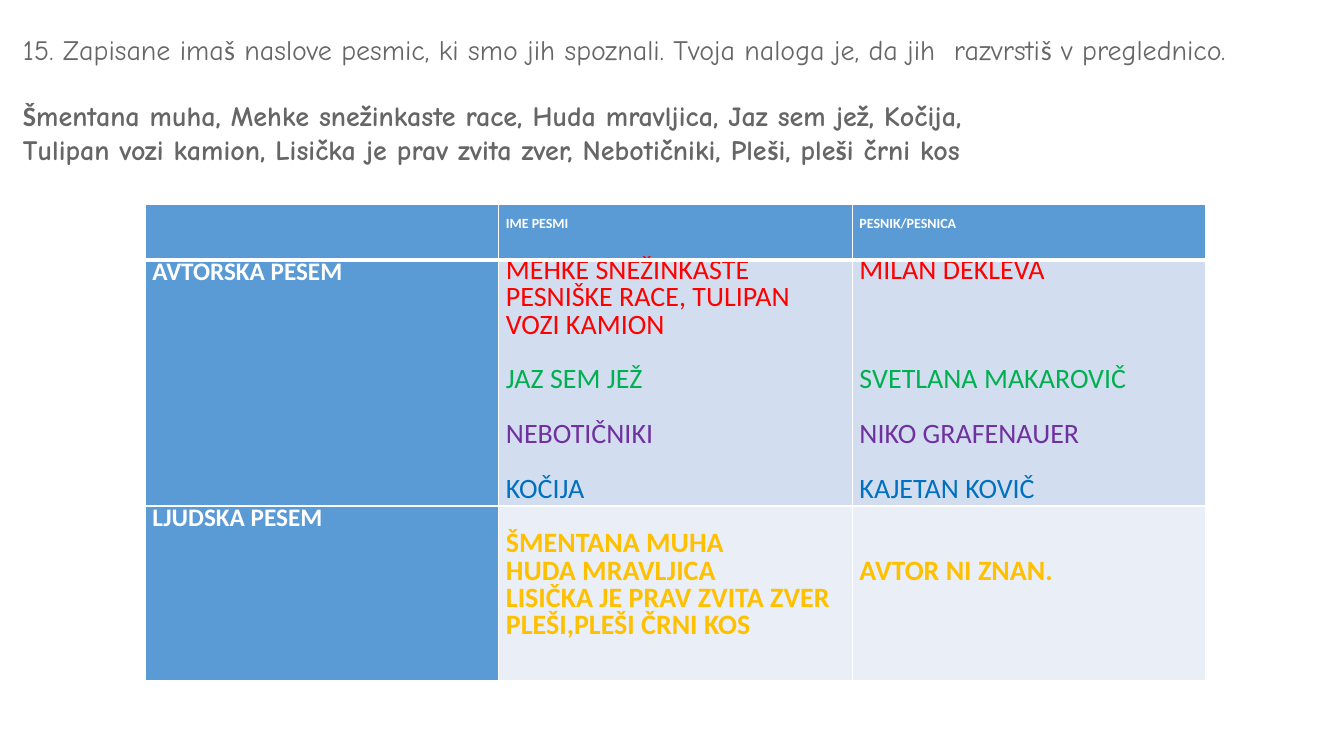
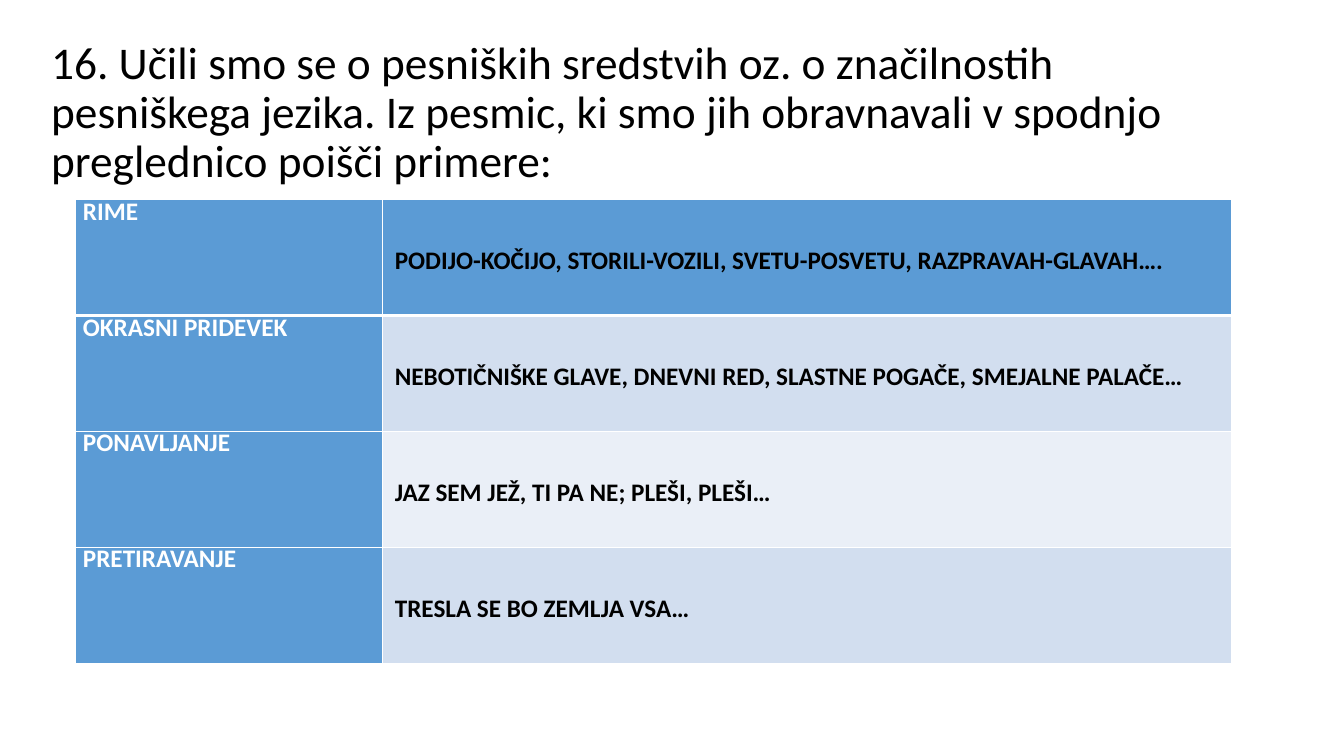
from itertools import groupby

from lxml.etree import SubElement
from pptx import Presentation
from pptx.dml.color import RGBColor
from pptx.oxml.ns import qn
from pptx.util import Cm, Pt

WHITE = RGBColor(0xFF, 0xFF, 0xFF)
BLACK = RGBColor(0x00, 0x00, 0x00)
GREY = RGBColor(0x66, 0x66, 0x66)
BLUE = RGBColor(0x5B, 0x9B, 0xD5)
BANDS = (RGBColor(0xD2, 0xDE, 0xEF), RGBColor(0xEA, 0xEF, 0xF7))
RED = RGBColor(0xFF, 0x00, 0x00)
GREEN = RGBColor(0x00, 0xB0, 0x50)
PURPLE = RGBColor(0x70, 0x30, 0xA0)
AZURE = RGBColor(0x00, 0x70, 0xC0)
GOLD = RGBColor(0xFF, 0xC0, 0x00)

BODY_FONT = "Calibri"
HAND_FONT = "Comic Neue"
LINE = Pt(19.5)
THIN, THICK = Pt(1), Pt(3)

SONGS = [
    ("MEHKE SNEŽINKASTE PESNIŠKE RACE, TULIPAN VOZI KAMION", "MILAN DEKLEVA", RED),
    ("JAZ SEM JEŽ", "SVETLANA MAKAROVIČ", GREEN),
    ("NEBOTIČNIKI", "NIKO GRAFENAUER", PURPLE),
    ("KOČIJA", "KAJETAN KOVIČ", AZURE),
]
FOLK_SONGS = ["ŠMENTANA MUHA", "HUDA MRAVLJICA",
              "LISIČKA JE PRAV ZVITA ZVER", "PLEŠI,PLEŠI ČRNI KOS"]
DEVICES = [
    ("RIME", "PODIJO-KOČIJO, STORILI-VOZILI, SVETU-POSVETU, RAZPRAVAH-GLAVAH…."),
    ("OKRASNI PRIDEVEK",
     "NEBOTIČNIŠKE GLAVE, DNEVNI RED, SLASTNE POGAČE, SMEJALNE PALAČE…"),
    ("PONAVLJANJE", "JAZ SEM JEŽ, TI PA NE; PLEŠI, PLEŠI…"),
    ("PRETIRAVANJE", "TRESLA SE BO ZEMLJA VSA…"),
]


def add_text(tf, text, size=18, color=WHITE, bold=False, font=BODY_FONT,
             spacing=LINE, before=0):
    p = tf.paragraphs[0]
    if p.runs:
        p = tf.add_paragraph()
    p.line_spacing = spacing
    p.space_before = before
    for is_caron_s, chars in groupby(text, lambda c: c in "šŠ"):
        r = p.add_run()
        r.text = "".join(chars)
        r.font.name = BODY_FONT if is_caron_s else font
        r.font.size = Pt(size)
        r.font.bold = bold
        r.font.color.rgb = color


def add_textbox(s, left, top, width, height):
    tf = s.shapes.add_textbox(Cm(left), Cm(top), Cm(width), Cm(height)).text_frame
    tf.word_wrap = True
    return tf


def set_borders(cell, row):
    widths = {"a:lnL": THIN, "a:lnR": THIN,
              "a:lnT": THICK if row == 1 else THIN,
              "a:lnB": THICK if row == 0 else THIN}
    tc_pr = cell._tc.get_or_add_tcPr()
    for tag, width in widths.items():
        ln = SubElement(tc_pr, qn(tag), w=str(width))
        fill = SubElement(ln, qn("a:solidFill"))
        SubElement(fill, qn("a:srgbClr"), val=str(WHITE))


def add_grid(s, left, top, widths, heights):
    table = s.shapes.add_table(len(heights), len(widths), Cm(left), Cm(top),
                               Cm(sum(widths)), Cm(sum(heights))).table
    table.first_row = table.horz_banding = False
    for column, width in zip(table.columns, widths):
        column.width = Cm(width)
    for i, height in enumerate(heights):
        table.rows[i].height = Cm(height)
        for j in range(len(widths)):
            cell = table.cell(i, j)
            cell.margin_left = cell.margin_right = Cm(0.18)
            cell.margin_top = cell.margin_bottom = 0
            set_borders(cell, i)
            cell.fill.solid()
            cell.fill.fore_color.rgb = BLUE if 0 in (i, j) else BANDS[(i - 1) % 2]
    return table


def songs_slide(s):
    tf = add_textbox(s, 0.33, 0.69, 33.5, 4.4)
    style = dict(size=20, color=GREY, font=HAND_FONT, spacing=1.0)
    add_text(tf, "15. Zapisane imaš naslove pesmic, ki smo jih spoznali. "
             "Tvoja naloga je, da jih  razvrstiš v preglednico.", **style)
    add_text(tf, "Šmentana muha, Mehke snežinkaste race, Huda mravljica, "
             "Jaz sem jež, Kočija,", bold=True, before=Pt(23.5), **style)
    add_text(tf, "Tulipan vozi kamion, Lisička je prav zvita zver, "
             "Nebotičniki, Pleši, pleši črni kos", bold=True, **style)

    table = add_grid(s, 3.66, 5.16, [8.91] * 3, [1.39, 6.2, 4.4])
    for j, heading in enumerate(("IME PESMI", "PESNIK/PESNICA"), 1):
        add_text(table.cell(0, j).text_frame, heading, size=10, bold=True)
    for i, kind in enumerate(("AVTORSKA PESEM", "LJUDSKA PESEM"), 1):
        add_text(table.cell(i, 0).text_frame, kind, bold=True)

    titles, poets = (table.cell(1, j).text_frame for j in (1, 2))
    for i, (title, poet, color) in enumerate(SONGS):
        title_gap = LINE if i else 0
        poet_gap = 3 * LINE if i == 1 else title_gap
        add_text(titles, title, size=20, color=color, before=title_gap)
        add_text(poets, poet, size=20, color=color, before=poet_gap)

    for j, lines in enumerate((FOLK_SONGS, ["AVTOR NI ZNAN."]), 1):
        cell = table.cell(2, j)
        cell.margin_top = j * LINE
        for line in lines:
            add_text(cell.text_frame, line, size=20, color=GOLD, bold=True)


def devices_slide(s):
    tf = add_textbox(s, 1.04, 0.89, 30.43, 4)
    add_text(tf, "16. Učili smo se o pesniških sredstvih oz. o značilnostih "
             "pesniškega jezika. Iz pesmic, ki smo jih obravnavali v spodnjo "
             "preglednico poišči primere:", size=32.4, color=BLACK, spacing=0.9)

    table = add_grid(s, 1.91, 5.03, [7.72, 21.41], [2.92] * len(DEVICES))
    for i, (device, examples) in enumerate(DEVICES):
        add_text(table.cell(i, 0).text_frame, device, bold=True)
        cell = table.cell(i, 1)
        cell.margin_left = Cm(0.32)
        add_text(cell.text_frame, examples, color=BLACK, bold=True, spacing=2.5)


def main():
    prs = Presentation()
    prs.slide_width, prs.slide_height = Cm(33.87), Cm(19.05)
    for build in (songs_slide, devices_slide):
        build(prs.slides.add_slide(prs.slide_layouts[6]))
    prs.save("out.pptx")


if __name__ == "__main__":
    main()
